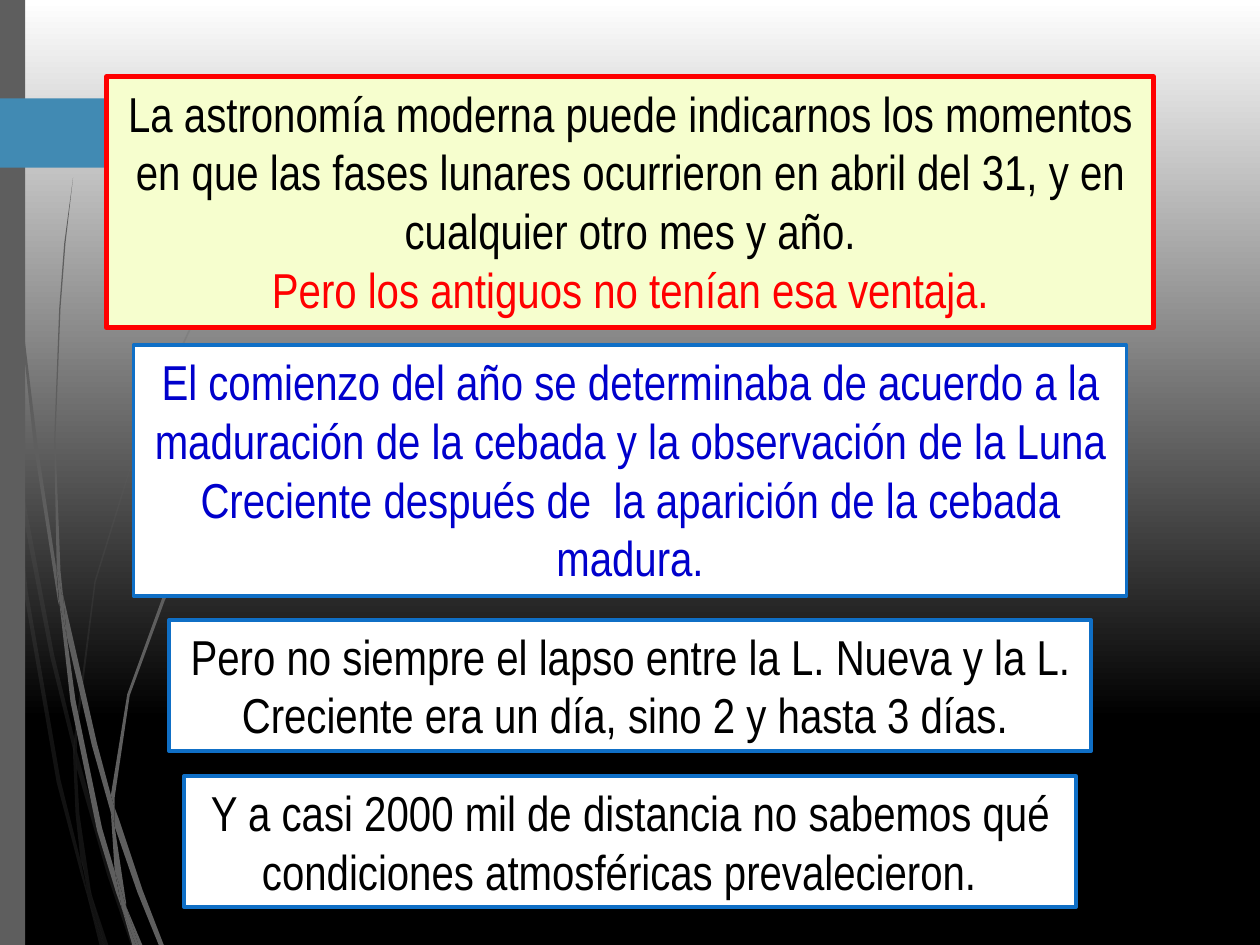
from dataclasses import dataclass

from lxml.etree import SubElement
from pptx import Presentation
from pptx.dml.color import RGBColor
from pptx.enum.shapes import MSO_SHAPE as Shape
from pptx.enum.text import MSO_ANCHOR as Anchor, MSO_AUTO_SIZE as AutoSize, PP_ALIGN as Align
from pptx.oxml.ns import qn
from pptx.util import Inches, Pt


@dataclass(frozen=True)
class Theme:
    font: str = "Arial Narrow"
    size: int = 28
    white: str = "FFFFFF"
    black: str = "000000"
    grey: str = "5E5E5E"
    teal: str = "418AB3"
    border: str = "0F6FC6"
    red: str = "FF0000"
    navy: str = "0000CC"
    cream: str = "F6FECE"


THEME = Theme()
PAGE_WIDTH, PAGE_HEIGHT = 10, 7.5

# Outlines of the grass blades, in inches from the top left of their region
FAINT_BLADES = [
    [(0.08, 3.5), (0.06, 3.22), (0, 2.82), (0, 2.99), (0.07, 3.44)],
    [(0.4, 5.22), (0.59, 5.99), (0.59, 5.86), (0.43, 5.2), (0.1, 3.45), (0.12, 3.76)],
    [(0.64, 6.07), (0.61, 5.96), (0.61, 6.1), (0.85, 6.94), (1.04, 7.5), (1.08, 7.5),
     (0.88, 6.92)],
    [(0.83, 7.5), (0.86, 7.5), (0.73, 7.11)],
    [(0.64, 6.83), (0.48, 6.19), (0.22, 4.69), (0.12, 3.76), (0.08, 3.5), (0.19, 4.7),
     (0.45, 6.21), (0.64, 6.93), (0.7, 7.14), (0.69, 7.07)],
    [(0.58, 5.99), (0.6, 6.46), (0.64, 6.83), (0.67, 6.92), (0.73, 7.11), (0.72, 7.06),
     (0.63, 6.46), (0.61, 6.1), (0.61, 6.08)],
    [(0.61, 5.84), (0.76, 4.62), (1.11, 3.49), (1.59, 2.45), (1.87, 1.98), (2.01, 1.75),
     (2.17, 1.54), (2.17, 1.53), (2.01, 1.75), (1.86, 1.97), (1.58, 2.44), (1.1, 3.48),
     (0.75, 4.61), (0.59, 5.84), (0.59, 5.86), (0.61, 5.96)],
    [(0.7, 7.14), (0.79, 7.5), (0.82, 7.5)],
    [(0.61, 6.08), (0.61, 6.1), (0.61, 5.96), (0.59, 5.86), (0.58, 5.99)],
    [(0.67, 6.92), (0.65, 6.83), (0.69, 7.07), (0.7, 7.14), (0.82, 7.5), (0.83, 7.5),
     (0.73, 7.11)],
]
SOLID_BLADES = [
    [(0.05, 1.1), (0.14, 2.33), (0.27, 3.55), (0.46, 4.77), (0.47, 4.81), (0.45, 4.57),
     (0.45, 4.53), (0.3, 3.55), (0.15, 2.32), (0.06, 1.09), (0.04, 0.48), (0.03, 0),
     (0.02, 0), (0.03, 0.48)],
    [(0.73, 5.92), (0.88, 6.45), (0.88, 6.33), (0.88, 6.31), (0.77, 5.9), (0.5, 4.72),
     (0.53, 5.05)],
    [(0.94, 6.49), (0.91, 6.41), (0.91, 6.56), (1.09, 7.08), (1.26, 7.5), (1.3, 7.5),
     (1.13, 7.06)],
    [(0.91, 6.91), (0.81, 6.57), (0.6, 5.56), (0.53, 5.05), (0.47, 4.77), (0.56, 5.57),
     (0.77, 6.59), (0.92, 7.08), (0.97, 7.22), (0.96, 7.17)],
    [(0.5, 4.72), (0.48, 4.53), (0.44, 3.49), (0.48, 2.45), (0.52, 1.93), (0.58, 1.41),
     (0.51, 1.93), (0.47, 2.45), (0.43, 3.49), (0.45, 4.49), (0.49, 4.72)],
    [(1.1, 7.5), (1.13, 7.5), (1, 7.19)],
    [(0.47, 4.77), (0.53, 5.05), (0.5, 4.72), (0.49, 4.72), (0.45, 4.49), (0.45, 4.53)],
    [(0.91, 6.33), (1.03, 5.52), (1.31, 4.76), (1.69, 4.06), (1.91, 3.74), (2.03, 3.59),
     (2.16, 3.44), (2.15, 3.44), (2.03, 3.58), (1.91, 3.73), (1.68, 4.05), (1.29, 4.74),
     (1.01, 5.51), (0.88, 6.31), (0.91, 6.41)],
    [(0.97, 7.22), (1.05, 7.5), (1.08, 7.5)],
    [(0.88, 6.45), (0.91, 6.91), (0.96, 7.06), (1, 7.19), (1, 7.16), (0.91, 6.56),
     (0.9, 6.51)],
    [(0.88, 6.45), (0.9, 6.51), (0.91, 6.56), (0.91, 6.41), (0.88, 6.31), (0.88, 6.33)],
    [(0.96, 7.06), (0.91, 6.91), (0.96, 7.17), (0.97, 7.22), (1.08, 7.5), (1.1, 7.5),
     (1, 7.19)],
]


def paint(shape, color, opacity=100):
    """Give a shape a flat fill, without line or shadow."""
    shape.shadow.inherit = False
    shape.line.fill.background()
    shape.fill.solid()
    shape.fill.fore_color.rgb = RGBColor.from_string(color)
    if opacity < 100:
        tone = shape.fill._xPr.find(".//" + qn("a:srgbClr"))
        SubElement(tone, qn("a:alpha"), val=str(opacity * 1000))


def add_outline(page, points, left, top, color, opacity=100):
    corners = [(Inches(left + x), Inches(top + y)) for x, y in points]
    builder = page.shapes.build_freeform(*corners[0])
    builder.add_line_segments(corners[1:], close=True)
    paint(builder.convert_to_shape(), color, opacity)


def add_background(page):
    fill = page.background.fill
    fill.gradient()
    fill.gradient_angle = 270
    for stop, color, position in zip(fill.gradient_stops, (THEME.white, THEME.black), (0, 0.76)):
        stop.color.rgb = RGBColor.from_string(color)
        stop.position = position


def add_side_decoration(page, left, top, height):
    # Grass blades
    for blades, opacity in ((FAINT_BLADES, 20), (SOLID_BLADES, 100)):
        for blade in blades:
            add_outline(page, blade, left, top, THEME.grey, opacity)
    # Side bar
    bar = page.shapes.add_shape(
        Shape.RECTANGLE, Inches(left), Inches(top), Inches(0.2), Inches(height))
    paint(bar, THEME.grey)
    # Arrow tab
    tab = [(0, 0), (1.21, 0), (1.24, 0.01), (1.49, 0.26), (1.49, 0.29),
           (1.24, 0.54), (1.21, 0.55), (0, 0.55)]
    add_outline(page, tab, left, top + 0.78, THEME.teal)


def add_statement(page, top, width, height, lines, fill=THEME.white, border=THEME.border, weight=2):
    """Place a framed statement, centred across the page; lines are (text, colour)."""
    left = (PAGE_WIDTH - width) / 2
    box = page.shapes.add_shape(
        Shape.RECTANGLE, Inches(left), Inches(top), Inches(width), Inches(height))
    paint(box, fill)
    box.line.color.rgb = RGBColor.from_string(border)
    box.line.width = Pt(weight)
    frame = box.text_frame
    frame.word_wrap = True
    frame.auto_size = AutoSize.SHAPE_TO_FIT_TEXT
    frame.vertical_anchor = Anchor.TOP
    for index, (text, color) in enumerate(lines):
        para = frame.add_paragraph() if index else frame.paragraphs[0]
        para.alignment = Align.CENTER
        span = para.add_run()
        span.text = text
        span.font.name = THEME.font
        span.font.size = Pt(THEME.size)
        span.font.color.rgb = RGBColor.from_string(color)


def main():
    deck = Presentation()
    deck.slide_width, deck.slide_height = Inches(PAGE_WIDTH), Inches(PAGE_HEIGHT)
    page = deck.slides.add_slide(deck.slide_layouts[6])
    add_background(page)
    add_side_decoration(page, 0, 0, PAGE_HEIGHT)

    # Statements
    add_statement(page, 2.74, 7.88, 1.99, [
        ("El comienzo del año se determinaba de acuerdo a la maduración de la cebada y la "
         "observación de la Luna Creciente después de  la aparición de la cebada madura.",
         THEME.navy)])
    add_statement(page, 0.61, 8.31, 1.99, [
        ("La astronomía moderna puede indicarnos los momentos en que las fases lunares "
         "ocurrieron en abril del 31, y en cualquier otro mes y año.", THEME.black),
        ("Pero los antiguos no tenían esa ventaja.", THEME.red),
    ], fill=THEME.cream, border=THEME.red, weight=3)
    add_statement(page, 4.92, 7.32, 1.04, [
        ("Pero no siempre el lapso entre la L. Nueva y la L. Creciente era un día, "
         "sino 2 y hasta 3 días. ", THEME.black)])
    add_statement(page, 6.16, 7.08, 1.04, [
        ("Y a casi 2000 mil de distancia no sabemos qué condiciones atmosféricas "
         "prevalecieron.  ", THEME.black)])
    deck.save("out.pptx")


if __name__ == "__main__":
    main()
